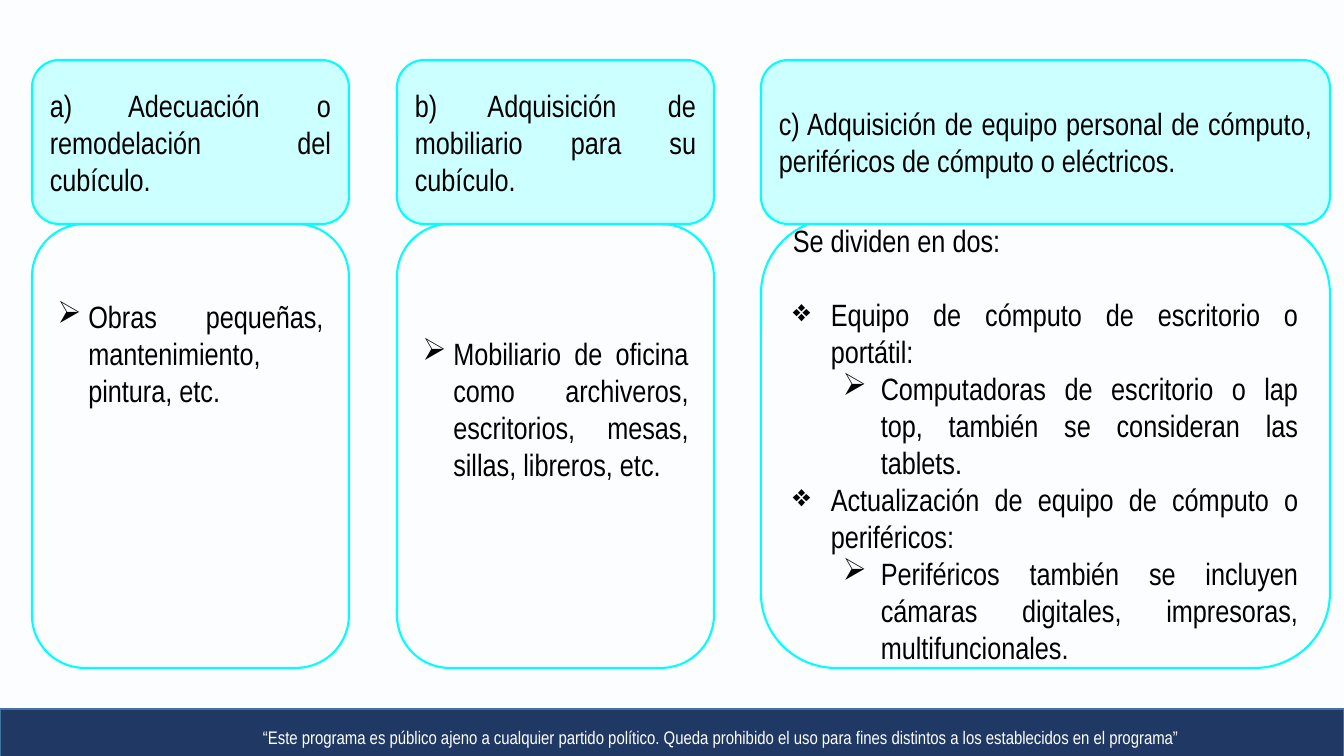
import pptx
import pptx.util
import pptx.dml.color
import pptx.enum.shapes
import pptx.enum.text
import pptx.oxml.ns
import lxml.etree

ALIGN = pptx.enum.text.PP_ALIGN
ANCHOR = pptx.enum.text.MSO_ANCHOR
KIND = pptx.enum.shapes.MSO_SHAPE


def px(n):
    return pptx.util.Emu(round(n * 914400 / 100.8))


def color(code):
    return pptx.dml.color.RGBColor.from_string(code)


class Deck:
    """Holds the style and the current slide."""

    font = "Arial Narrow"
    paper, cyan, pale = "FBFDFF", "00FFFF", "CCFFFF"

    def __init__(self, show):
        self.slide = show.slides.add_slide(show.slide_layouts[6])
        fill = self.slide.background.fill
        fill.solid()
        fill.fore_color.rgb = color(self.paper)

    def shape(self, kind, box, fill, line, width):
        item = self.slide.shapes.add_shape(kind, *map(px, box))
        item.shadow.inherit = False
        item.fill.solid()
        item.fill.fore_color.rgb = color(fill)
        item.line.color.rgb = color(line)
        item.line.width = pptx.util.Pt(width)
        return item

    def label(self, para, text, size=22, tint="000000", align=ALIGN.JUSTIFY):
        para.text = text
        para.alignment = align
        for run in para.runs:
            run.font.name = self.font
            run.font.size = pptx.util.Pt(size)
            run.font.color.rgb = color(tint)

    def bullet(self, para, mark, left, hang):
        props = para._p.get_or_add_pPr()
        props.set("marL", str(px(left)))
        props.set("indent", str(-px(hang)))
        char = lxml.etree.SubElement(props, pptx.oxml.ns.qn("a:buChar"))
        char.set("char", mark)

    def card(self, box, fill, items, top=None):
        item = self.shape(KIND.ROUNDED_RECTANGLE, box, fill, self.cyan, 1.5)
        frame = item.text_frame
        frame.word_wrap = True
        frame.vertical_anchor = ANCHOR.MIDDLE
        if top is not None:
            frame.vertical_anchor = ANCHOR.TOP
            frame.margin_top = px(top)
        for i, (text, mark, left, hang, gap) in enumerate(items):
            para = frame.add_paragraph() if i else frame.paragraphs[0]
            if gap:
                para.space_before = pptx.util.Pt(gap)
            if mark:
                para.level = int(left > hang)
                self.bullet(para, mark, left, hang)
            self.label(para, text)

    def footer(self, text):
        self.shape(KIND.RECTANGLE, (0, 709, 1344, 55), "203864", "43739E", 1)
        item = self.slide.shapes.add_textbox(*map(px, (163, 713, 1114, 49)))
        frame = item.text_frame
        frame.word_wrap = True
        frame.vertical_anchor = ANCHOR.MIDDLE
        self.label(frame.paragraphs[0], text, 13, "FFFFFF", ALIGN.CENTER)


def main():
    show = pptx.Presentation()
    show.slide_width, show.slide_height = px(1344), px(756)
    deck = Deck(show)
    deck.footer("“Este programa es público ajeno a cualquier partido político. "
                "Queda prohibido el uso para fines distintos a los "
                "establecidos en el programa”")

    works = [("Obras pequeñas, mantenimiento, pintura, etc.", "➢", 31, 31, 0)]
    desks = [("Mobiliario de oficina como archiveros, escritorios, mesas, "
              "sillas, libreros, etc.", "➢", 31, 31, 0)]
    gear = [
        ("Se dividen en dos:", None, 0, 0, 0),
        ("Equipo de cómputo de escritorio o portátil:", "❖", 38, 38, 26.5),
        ("Computadoras de escritorio o lap top, también se consideran las "
         "tablets.", "➢", 88, 38, 0),
        ("Actualización de equipo de cómputo o periféricos:", "❖", 38, 38, 0),
        ("Periféricos también se incluyen cámaras digitales, impresoras, "
         "multifuncionales.", "➢", 88, 38, 0),
    ]
    cards = [
        (32, 317, 224, 58, "a) Adecuación o remodelación del cubículo.", works),
        (397, 317, 224, 95, "b) Adquisición de mobiliario para su cubículo.",
         desks),
        (761, 569, 219, None, "c) Adquisición de equipo personal de cómputo, "
         "periféricos de cómputo o eléctricos.", gear),
    ]
    for left, wide, y, top, head, items in cards:
        deck.card((left, y, wide, 668 - y), deck.paper, items, top)
        deck.card((left, 60, wide, 164), deck.pale, [(head, None, 0, 0, 0)])
    show.save("out.pptx")


if __name__ == "__main__":
    main()
